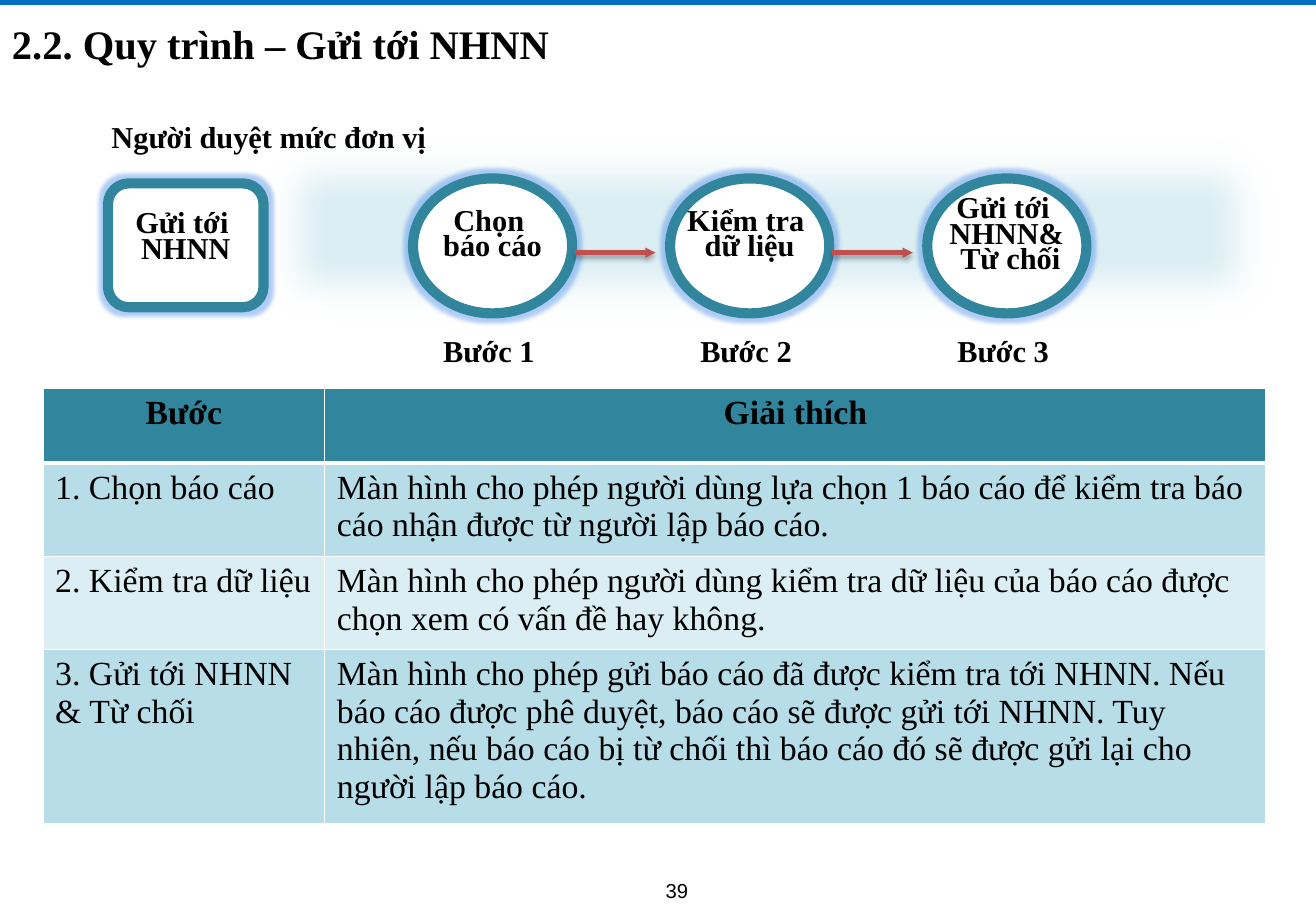
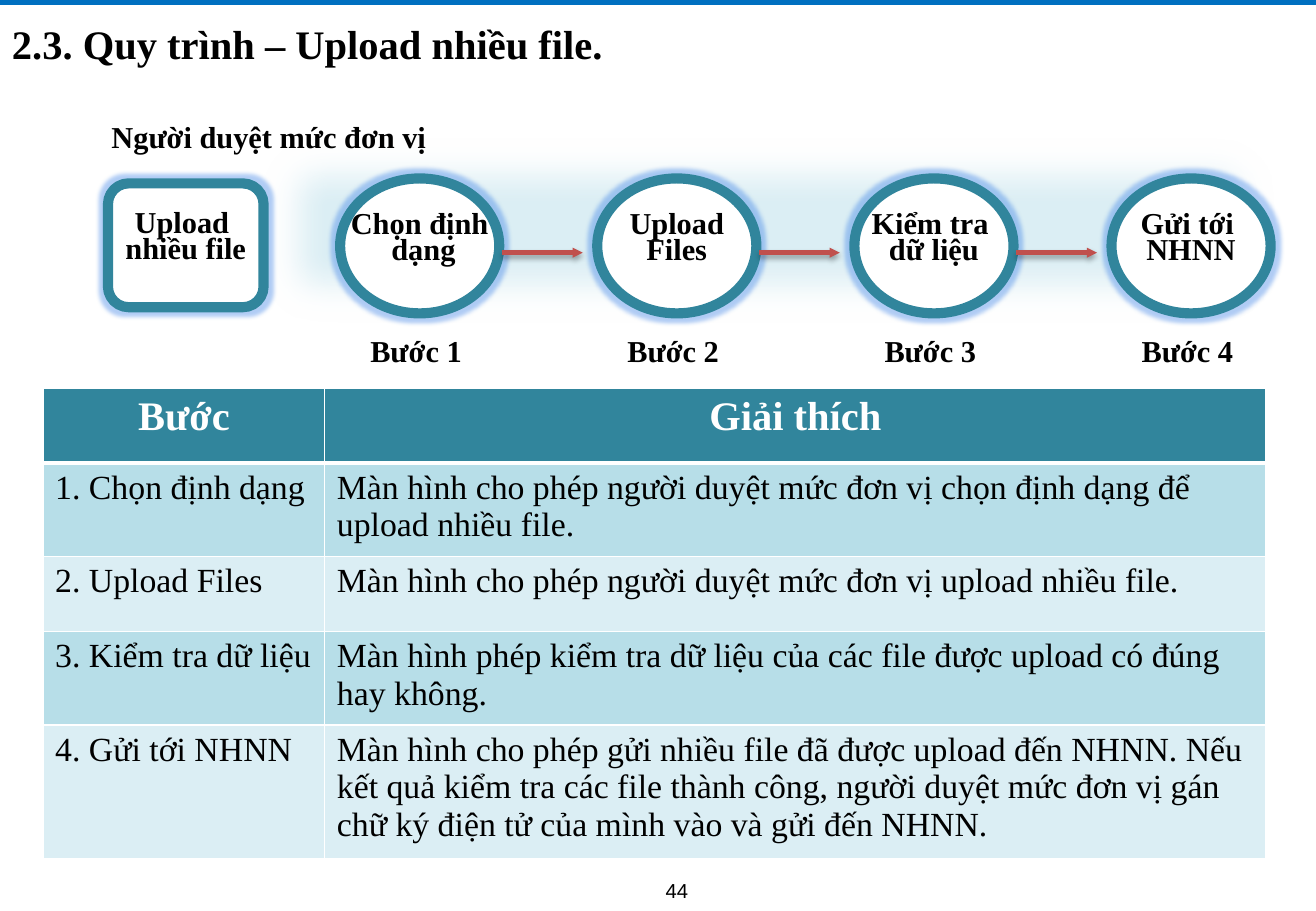
from lxml.etree import SubElement
from pptx import Presentation
from pptx.dml.color import RGBColor
from pptx.enum.shapes import MSO_CONNECTOR, MSO_SHAPE
from pptx.enum.text import MSO_ANCHOR, PP_ALIGN
from pptx.oxml import parse_xml
from pptx.oxml.ns import nsdecls, qn
from pptx.util import Pt

BLACK = RGBColor(0x00, 0x00, 0x00)
WHITE = RGBColor(0xFF, 0xFF, 0xFF)
BLUE = RGBColor(0x00, 0x70, 0xC0)
GLOW = RGBColor(0x3C, 0x82, 0xE8)
TEAL = RGBColor(0x31, 0x85, 0x9C)
SKY = RGBColor(0xB7, 0xDE, 0xE8)
PALE = RGBColor(0xDB, 0xEE, 0xF4)
RED = RGBColor(0xC0, 0x50, 0x4D)

SERIF = "Times New Roman"
SANS = "Arial"
SLIDE_WIDTH, SLIDE_HEIGHT = 780, 540
NODE_WIDTH, NODE_HEIGHT, NODE_TOP, NODE_PITCH = 94.3, 80, 105.8, 152.4
ARROW_GAP, ARROW_LENGTH, ARROW_TOP = 96, 47.8, 149.8
COLUMN_WIDTHS = (167, 558)

SOFT_EDGE = '<a:softEdge rad="317500"/>'
OUTER_GLOW = (f'<a:glow rad="63500"><a:srgbClr val="{GLOW}">'
              '<a:alpha val="40000"/></a:srgbClr></a:glow>')
DROP_SHADOW = ('<a:outerShdw blurRad="40000" dist="23000" dir="5400000" rotWithShape="0">'
               '<a:srgbClr val="000000"><a:alpha val="35000"/></a:srgbClr></a:outerShdw>')

SEND_SLIDE = {
    "title": "2.2. Quy trình – Gửi tới NHNN",
    "number": "39",
    "task": "Gửi tới \nNHNN",
    "first_left": 244.8,
    "text_drop": 0,
    "nodes": ["Chọn \nbáo cáo", "Kiểm tra \ndữ liệu", "Gửi tới \nNHNN&\n Từ chối"],
    "header_size": 20,
    "header_color": BLACK,
    "row_heights": [44.6, 55, 55, 103.4],
    "rows": [
        ("1. Chọn báo cáo",
         "Màn hình cho phép người dùng lựa chọn 1 báo cáo để kiểm tra báo cáo "
         "nhận được từ người lập báo cáo."),
        ("2. Kiểm tra dữ liệu",
         "Màn hình cho phép người dùng kiểm tra dữ liệu của báo cáo được chọn "
         "xem có vấn đề hay không."),
        ("3. Gửi tới NHNN & Từ chối",
         "Màn hình cho phép gửi báo cáo đã được kiểm tra tới NHNN. Nếu báo cáo "
         "được phê duyệt, báo cáo sẽ được gửi tới NHNN. Tuy nhiên, nếu báo cáo bị "
         "từ chối thì báo cáo đó sẽ được gửi lại cho người lập báo cáo."),
    ],
}

UPLOAD_SLIDE = {
    "title": "2.3. Quy trình – Upload nhiều file.",
    "number": "44",
    "task": "Upload \nnhiều file",
    "first_left": 201.6,
    "text_drop": 3.6,
    "nodes": ["Chọn định\n dạng", "Upload\nFiles", "Kiểm tra \ndữ liệu", "Gửi tới \nNHNN"],
    "header_size": 24,
    "header_color": WHITE,
    "row_heights": [44.6, 51.5, 44.6, 51.5, 73.7],
    "rows": [
        ("1. Chọn định dạng",
         "Màn hình cho phép người duyệt mức đơn vị chọn định dạng để upload nhiều file."),
        ("2. Upload Files",
         "Màn hình cho phép người duyệt mức đơn vị upload nhiều file."),
        ("3. Kiểm tra dữ liệu",
         "Màn hình phép kiểm tra dữ liệu của các file được upload có đúng hay không."),
        ("4. Gửi tới NHNN",
         "Màn hình cho phép gửi nhiều file đã được upload đến NHNN. Nếu kết quả kiểm "
         "tra các file thành công, người duyệt mức đơn vị gán chữ ký điện tử của mình "
         "vào và gửi đến NHNN."),
    ],
}


def style_text(frame, size, color=BLACK, bold=True, name=SERIF, align=PP_ALIGN.LEFT):
    """Format every run of a text frame."""
    for para in frame.paragraphs:
        para.alignment = align
        for span in para.runs:
            span.font.name = name
            span.font.size = Pt(size)
            span.font.bold = bold
            span.font.color.rgb = color


def set_effect(shape, effect=""):
    """Give a shape exactly one effect, or none."""
    properties = shape._element.spPr
    for old in properties.findall(qn("a:effectLst")):
        properties.remove(old)
    properties.append(parse_xml(f'<a:effectLst {nsdecls("a")}>{effect}</a:effectLst>'))


def add_label(page, text, left, top, width, height, size=18, line_spacing=None, **style):
    """Add a text box holding one line."""
    box = page.shapes.add_textbox(Pt(left), Pt(top), Pt(width), Pt(height))
    frame = box.text_frame
    frame.word_wrap = True
    frame.text = text
    if line_spacing:
        frame.paragraphs[0].line_spacing = line_spacing
    style_text(frame, size, **style)
    return box


def add_block(page, kind, left, top, width, height, fill, line=None, line_width=0, effect=""):
    """Add a filled preset shape."""
    block = page.shapes.add_shape(kind, Pt(left), Pt(top), Pt(width), Pt(height))
    block.fill.solid()
    block.fill.fore_color.rgb = fill
    if line is None:
        block.line.fill.background()
    else:
        block.line.color.rgb = line
        block.line.width = Pt(line_width)
    set_effect(block, effect)
    return block


def add_node(page, kind, text, left, top, width, height, text_drop):
    """Add a glowing outlined node with tightly set centred text."""
    node = add_block(page, kind, left, top, width, height, WHITE, TEAL, 6, OUTER_GLOW)
    frame = node.text_frame
    frame.text = text
    frame.word_wrap = False
    frame.vertical_anchor = MSO_ANCHOR.MIDDLE
    frame.margin_top, frame.margin_bottom = Pt(text_drop), Pt(0)
    style_text(frame, 18, align=PP_ALIGN.CENTER)
    for para in frame.paragraphs:
        para.line_spacing = Pt(5.2)
        para.space_after = Pt(10)


def add_arrow(page, left):
    """Add a red arrow pointing to the next node."""
    arrow = page.shapes.add_connector(
        MSO_CONNECTOR.STRAIGHT, Pt(left), Pt(ARROW_TOP), Pt(left + ARROW_LENGTH), Pt(ARROW_TOP))
    arrow.line.color.rgb = RED
    arrow.line.width = Pt(3)
    SubElement(arrow.line._get_or_add_ln(), qn("a:tailEnd"), type="triangle", w="sm", len="sm")
    set_effect(arrow, DROP_SHADOW)


def set_borders(cell, bottom):
    """Draw white borders round a cell."""
    properties = cell._tc.get_or_add_tcPr()
    widths = {"lnL": 1, "lnR": 1, "lnT": 1, "lnB": bottom}
    for index, (side, width) in enumerate(widths.items()):
        properties.insert(index, parse_xml(
            f'<a:{side} {nsdecls("a")} w="{Pt(width)}"><a:solidFill>'
            f'<a:srgbClr val="{WHITE}"/></a:solidFill></a:{side}>'))


def add_steps_table(page, content):
    """Add the table that explains each step."""
    rows = [("Bước", "Giải thích"), *content["rows"]]
    heights = content["row_heights"]
    table = page.shapes.add_table(
        len(rows), 2, Pt(25.5), Pt(230), Pt(sum(COLUMN_WIDTHS)), Pt(sum(heights))).table
    for column, width in zip(table.columns, COLUMN_WIDTHS):
        column.width = Pt(width)
    for index, (texts, height) in enumerate(zip(rows, heights)):
        table.rows[index].height = Pt(height)
        for cell, text in zip(table.rows[index].cells, texts):
            cell.text = text
            cell.fill.solid()
            if index == 0:
                cell.fill.fore_color.rgb = TEAL
                style_text(cell.text_frame, content["header_size"], content["header_color"],
                           align=PP_ALIGN.CENTER)
            else:
                cell.fill.fore_color.rgb = SKY if index % 2 else PALE
                style_text(cell.text_frame, 20, bold=False)
            set_borders(cell, 3 if index == 0 else 1)


def add_frame(page, title, number):
    """Add the top band, title and page number."""
    add_block(page, MSO_SHAPE.RECTANGLE, 0, 0, SLIDE_WIDTH, 3, BLUE)
    heading = add_label(page, title, 0, 7, 514, 37, 24)
    heading.text_frame.vertical_anchor = MSO_ANCHOR.MIDDLE
    add_label(page, number, 322, 517, 158.4, 19, 12, bold=False, name=SANS,
              align=PP_ALIGN.CENTER)


def add_process(page, content):
    """Add the task, its chain of steps and their captions."""
    add_block(page, MSO_SHAPE.RECTANGLE, 147.6, 74.2, 614, 123, PALE, WHITE, 2, SOFT_EDGE)
    add_label(page, "Người duyệt mức đơn vị", 59, 69.8, 205, 26, line_spacing=0.85)
    add_node(page, MSO_SHAPE.ROUNDED_RECTANGLE, content["task"], 64, 108.7, 92.2, 73.4, 3.6)
    lefts = [content["first_left"] + NODE_PITCH * index for index in range(len(content["nodes"]))]
    for step, (text, left) in enumerate(zip(content["nodes"], lefts), start=1):
        add_node(page, MSO_SHAPE.OVAL, text, left, NODE_TOP, NODE_WIDTH, NODE_HEIGHT,
                 content["text_drop"])
        add_label(page, f"Bước {step}", left + 10.8, 195, 72, 20, line_spacing=0.95)
    for left in lefts[:-1]:
        add_arrow(page, left + ARROW_GAP)


def main():
    """Build and save the deck."""
    deck = Presentation()
    deck.slide_width, deck.slide_height = Pt(SLIDE_WIDTH), Pt(SLIDE_HEIGHT)
    for content in (SEND_SLIDE, UPLOAD_SLIDE):
        page = deck.slides.add_slide(deck.slide_layouts[6])
        add_frame(page, content["title"], content["number"])
        add_process(page, content)
        add_steps_table(page, content)
    deck.save("out.pptx")


if __name__ == "__main__":
    main()
